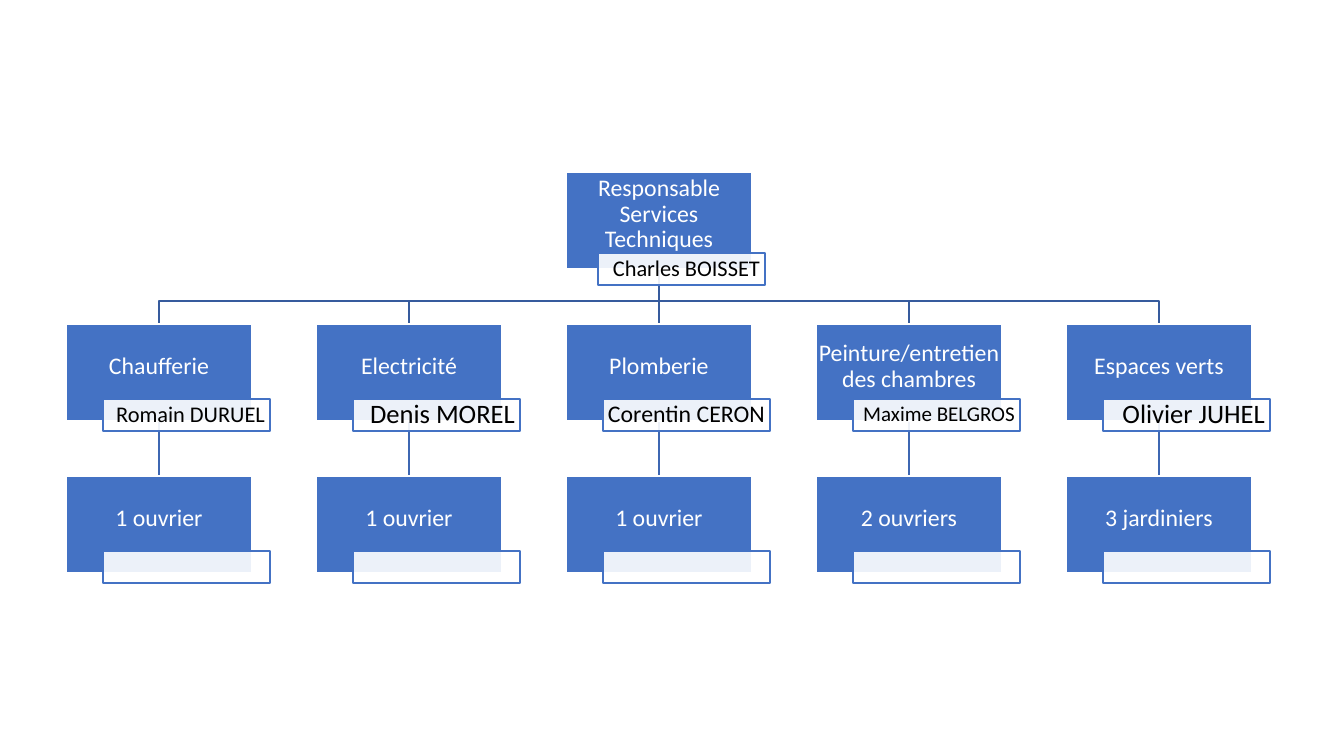
"""Build the organisation chart of the technical services team."""
from lxml import etree
from pptx import Presentation
from pptx.dml.color import RGBColor
from pptx.enum.shapes import MSO_CONNECTOR, MSO_SHAPE
from pptx.enum.text import MSO_ANCHOR, PP_ALIGN
from pptx.oxml.ns import qn
from pptx.util import Pt

MANAGER = ("Responsable Services Techniques", "Charles BOISSET", 16)
TEAMS = [
    ("Chaufferie", "Romain DURUEL", 16, "1 ouvrier"),
    ("Electricité", "Denis MOREL", 19, "1 ouvrier"),
    ("Plomberie", "Corentin CERON", 17, "1 ouvrier"),
    ("Peinture/entretien des chambres", "Maxime BELGROS", 15, "2 ouvriers"),
    ("Espaces verts", "Olivier JUHEL", 19, "3 jardiniers"),
]

BLUE = RGBColor(0x44, 0x72, 0xC4)
UPPER_LINE = RGBColor(0x36, 0x5B, 0x9D)
LOWER_LINE = RGBColor(0x3E, 0x67, 0xB2)
WHITE = RGBColor(0xFF, 0xFF, 0xFF)
BLACK = RGBColor(0, 0, 0)
RECTANGLE = MSO_SHAPE.RECTANGLE
STRAIGHT = MSO_CONNECTOR.STRAIGHT
MIDDLE = MSO_ANCHOR.MIDDLE
CENTER, RIGHT = PP_ALIGN.CENTER, PP_ALIGN.RIGHT
TOP_SITE, BOTTOM_SITE = 0, 2

FONT = "Calibri"
SCALE = 12192000 / 1344
SLIDE_WIDTH, SLIDE_HEIGHT = 1344, 756
LEFT, TOP, COLUMN_STEP, ROW_STEP = 66, 172, 250, 152
BOX_WIDTH, BOX_HEIGHT = 186, 97
PLATE_WIDTH, PLATE_HEIGHT = 167, 32
PLATE_OFFSET, MANAGER_PLATE_OFFSET = (37, 75), (32, 81)
BOX_INSETS, PLATE_INSETS = (1, 1, 1, 13), (5, 1, 5, 1)
BRANCH_Y = 301
MIDDLE_COLUMN = len(TEAMS) // 2


def px(length):
    return round(length * SCALE)


def corner(column, row):
    return LEFT + column * COLUMN_STEP, TOP + row * ROW_STEP


def add_link(shapes, column, row):
    """Add a straight line from the box in this row to the one below."""
    left, top = corner(column, row)
    x = px(left + BOX_WIDTH / 2)
    link = shapes.add_connector(STRAIGHT, x, px(top + BOX_HEIGHT), x, px(top + ROW_STEP))
    link.line.color.rgb = LOWER_LINE if row else UPPER_LINE
    link.line.width = Pt(1)
    etree.SubElement(link._element.spPr, qn("a:effectLst"))
    return link


def add_branch(shapes, column):
    """Add a bent line from the manager to the head of a team."""
    start_x, start_y = corner(MIDDLE_COLUMN, 0)
    end_x, end_y = corner(column, 1)
    start_x, end_x = start_x + BOX_WIDTH / 2, end_x + BOX_WIDTH / 2
    builder = shapes.build_freeform(start_x, start_y + BOX_HEIGHT, scale=SCALE)
    builder.add_line_segments(
        [(start_x, BRANCH_Y), (end_x, BRANCH_Y), (end_x, end_y)], close=False)
    branch = builder.convert_to_shape()
    branch.fill.background()
    branch.line.color.rgb = UPPER_LINE
    branch.line.width = Pt(1)
    branch.shadow.inherit = False


def add_rectangle(shapes, place, fill, line, text, size, color, align, insets):
    shape = shapes.add_shape(RECTANGLE, *map(px, place))
    shape.shadow.inherit = False
    shape.fill.solid()
    shape.fill.fore_color.rgb = fill
    shape.line.color.rgb = line
    shape.line.width = Pt(1)
    frame = shape.text_frame
    frame.word_wrap = True
    frame.vertical_anchor = MIDDLE
    (frame.margin_left, frame.margin_top,
     frame.margin_right, frame.margin_bottom) = map(px, insets)
    paragraph = frame.paragraphs[0]
    paragraph.text = text
    paragraph.alignment = align
    paragraph.line_spacing = 0.9
    paragraph.font.name = FONT
    paragraph.font.size = Pt(size)
    paragraph.font.color.rgb = color
    return shape


def add_post(shapes, column, row, title, name="", name_size=16, offset=PLATE_OFFSET):
    """Add a titled box with its name plate and return the box."""
    left, top = corner(column, row)
    box = add_rectangle(shapes, (left, top, BOX_WIDTH, BOX_HEIGHT), BLUE, WHITE,
                        title, 17, WHITE, CENTER, BOX_INSETS)
    place = (left + offset[0], top + offset[1], PLATE_WIDTH, PLATE_HEIGHT)
    plate = add_rectangle(shapes, place, WHITE, BLUE,
                          name, name_size, BLACK, RIGHT, PLATE_INSETS)
    plate_color = plate._element.spPr.find(qn("a:solidFill"))[0]
    etree.SubElement(plate_color, qn("a:alpha"), val="90000")
    return box


def join(link, upper, lower):
    link.begin_connect(upper, BOTTOM_SITE)
    link.end_connect(lower, TOP_SITE)


def main():
    presentation = Presentation()
    presentation.slide_width = px(SLIDE_WIDTH)
    presentation.slide_height = px(SLIDE_HEIGHT)
    slide = presentation.slides.add_slide(presentation.slide_layouts[6])
    shapes = slide.shapes

    team_links = [add_link(shapes, column, 1) for column in range(len(TEAMS))]
    for column in range(len(TEAMS)):
        if column != MIDDLE_COLUMN:
            add_branch(shapes, column)
    manager_link = add_link(shapes, MIDDLE_COLUMN, 0)

    manager = add_post(shapes, MIDDLE_COLUMN, 0, *MANAGER, offset=MANAGER_PLATE_OFFSET)
    for column, (title, name, name_size, staff) in enumerate(TEAMS):
        head = add_post(shapes, column, 1, title, name, name_size)
        workers = add_post(shapes, column, 2, staff)
        join(team_links[column], head, workers)
        if column == MIDDLE_COLUMN:
            join(manager_link, manager, head)

    presentation.save("out.pptx")


if __name__ == "__main__":
    main()
